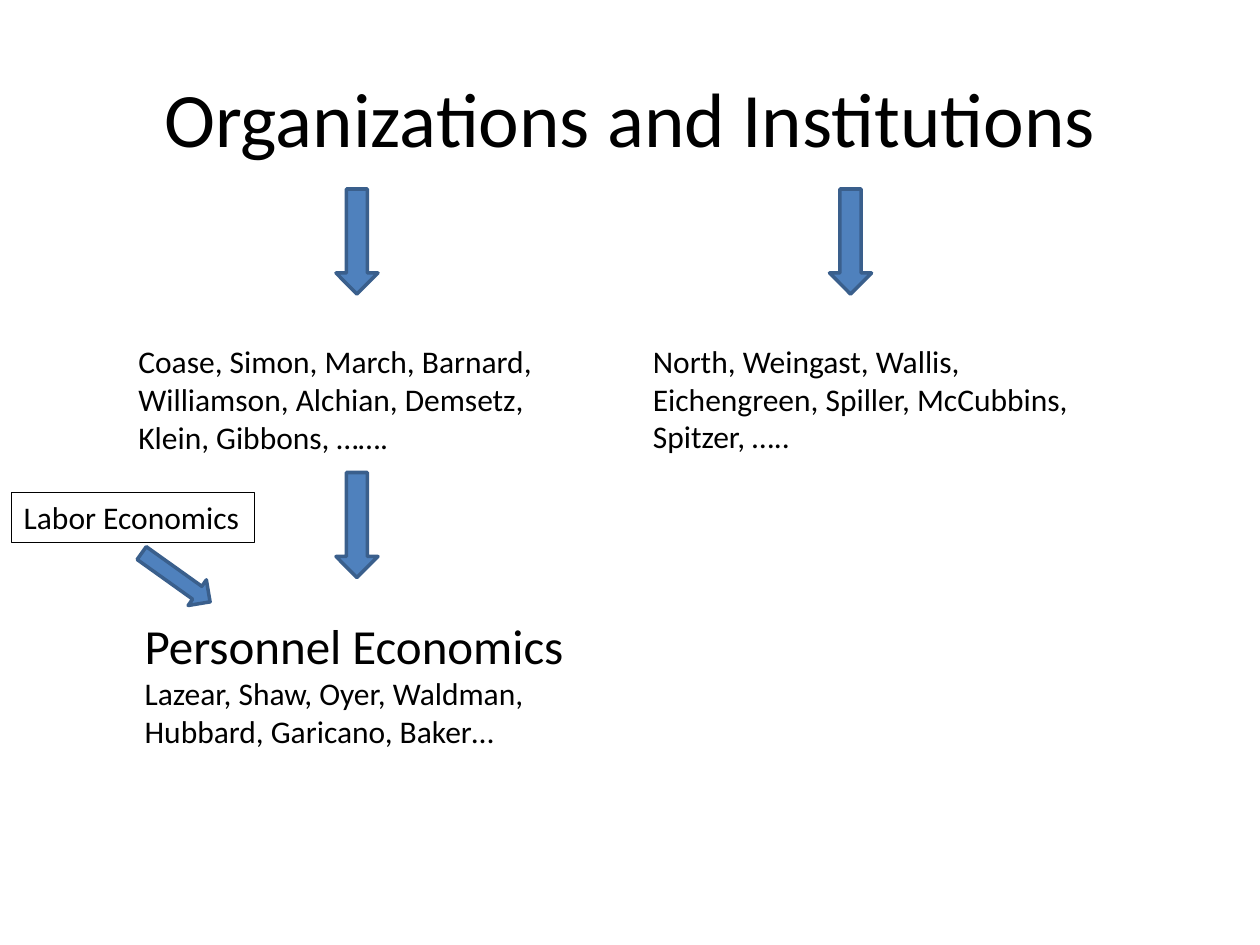
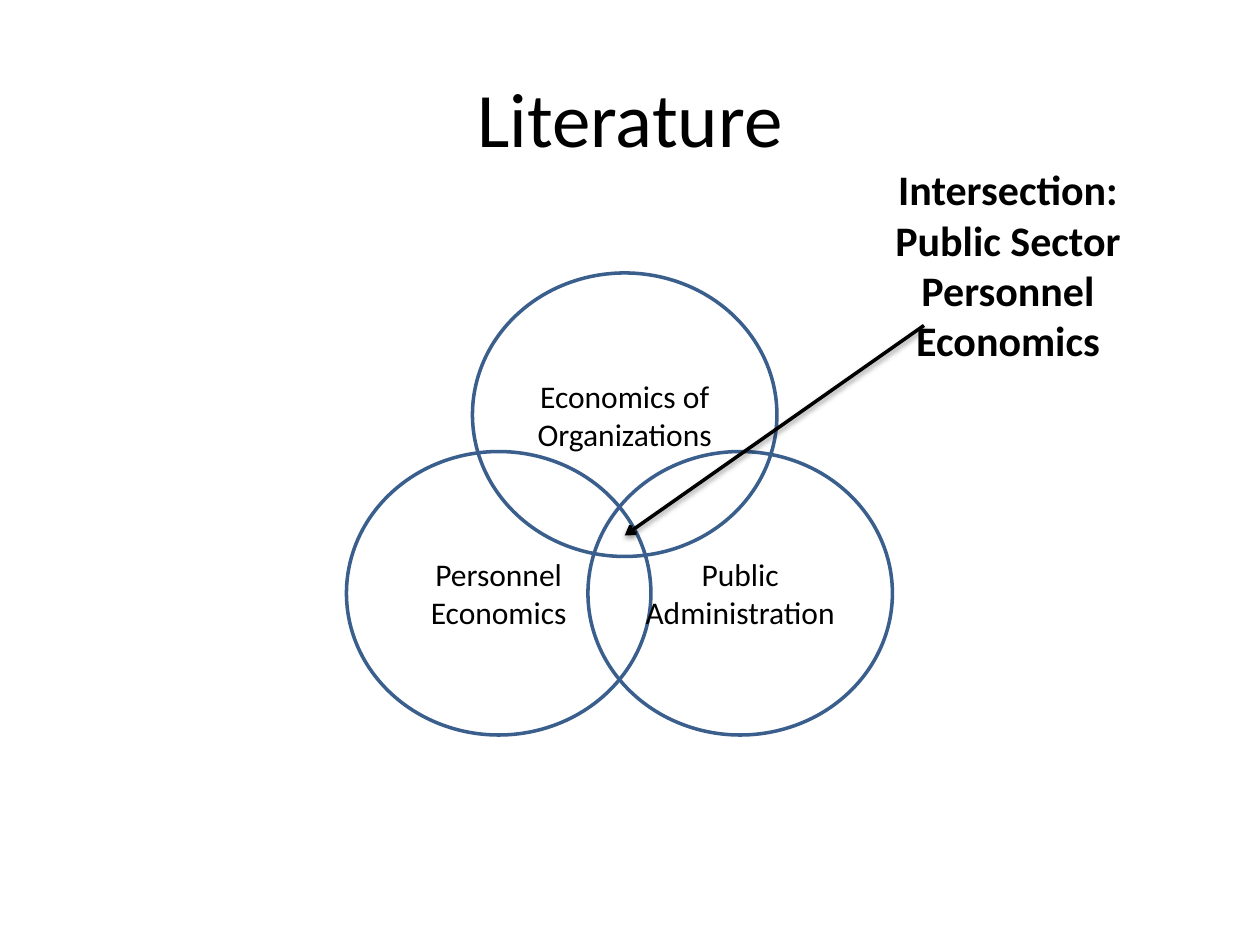
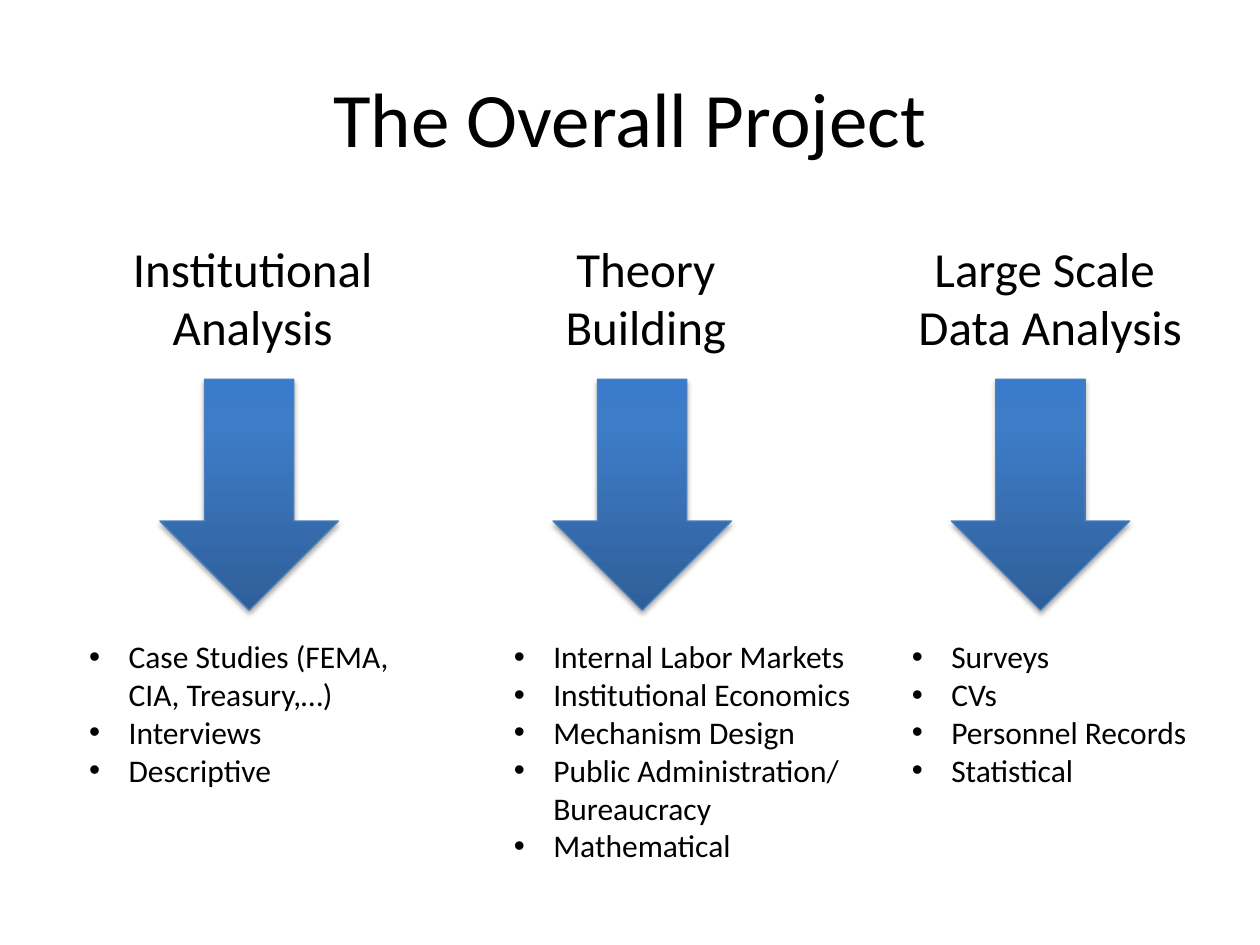
import pptx
import pptx.util
import pptx.dml.color
import pptx.enum.shapes
import pptx.enum.text
import pptx.oxml.ns
import lxml.etree

Pt = pptx.util.Pt
qn = pptx.oxml.ns.qn
Shape = pptx.enum.shapes.MSO_SHAPE
Anchor = pptx.enum.text.MSO_ANCHOR
Align = pptx.enum.text.PP_ALIGN
Auto = pptx.enum.text.MSO_AUTO_SIZE

# Shared look
FONT = "Calibri"
BLACK = "000000"
BLUE = "4F81BD"
EDGE = "3A5F8C"
RIM = "4B7EBC"
SHADE = [(0, "2F5F99"), (80, "3D7CC7"), (100, "3A7CCB")]
TITLE, HEAD, LEAD, BODY = 44, 28, 24, 18
INDENT = 22.5


def color(code):
    return pptx.dml.color.RGBColor.from_string(code)


def node(parent, tag, **attrs):
    item = lxml.etree.SubElement(parent, qn(tag))
    for key, value in attrs.items():
        item.set(key, str(value))
    return item


def stroke(line, code, width):
    line.color.rgb = color(code)
    line.width = Pt(width)


# Text
def write(frame, lines, size, align=Align.LEFT, bold=False, bullet=False):
    """Fill a frame; a line is a string or a (string, size) pair."""
    for i, line in enumerate(lines):
        words, points = line if isinstance(line, tuple) else (line, size)
        para = frame.paragraphs[0] if i == 0 else frame.add_paragraph()
        para.alignment = align
        if bullet:
            props = para._p.get_or_add_pPr()
            props.set("marL", str(Pt(INDENT)))
            props.set("indent", str(-Pt(INDENT)))
            node(props, "a:buFont", typeface="Arial")
            node(props, "a:buChar", char="•")
        run = para.add_run()
        run.text = words
        run.font.name = FONT
        run.font.size = Pt(points)
        run.font.bold = bold
        run.font.color.rgb = color(BLACK)


def label(slide, box, lines, size=BODY, wrap=True, **style):
    item = slide.shapes.add_textbox(*map(Pt, box))
    frame = item.text_frame
    frame.word_wrap = wrap
    frame.auto_size = Auto.SHAPE_TO_FIT_TEXT
    write(frame, lines, size, **style)
    return item


def page(deck, title):
    slide = deck.slides.add_slide(deck.slide_layouts[6])
    item = slide.shapes.add_textbox(Pt(36), Pt(21.6), Pt(648), Pt(90))
    frame = item.text_frame
    frame.word_wrap = True
    frame.vertical_anchor = Anchor.MIDDLE
    write(frame, [title], TITLE, Align.CENTER)
    return slide


# Shapes
def figure(slide, kind, box, edge=EDGE, width=2):
    item = slide.shapes.add_shape(kind, *map(Pt, box))
    item.shadow.inherit = False
    stroke(item.line, edge, width)
    return item


def arrow(slide, box, turn=0):
    item = figure(slide, Shape.DOWN_ARROW, box)
    item.fill.solid()
    item.fill.fore_color.rgb = color(BLUE)
    item.rotation = turn


def shadow(effects, dist, alpha):
    drop = node(effects, "a:outerShdw", blurRad=Pt(3.1), dist=Pt(dist),
                dir=5400000, rotWithShape=0)
    tint = node(drop, "a:srgbClr", val=BLACK)
    node(tint, "a:alpha", val=alpha * 1000)


def block(slide, box):
    """Large arrow, shaded from light at the top to dark at the tip."""
    item = figure(slide, Shape.DOWN_ARROW, box, RIM, 0.75)
    item.fill.gradient()
    item.fill.gradient_angle = 90
    props = item._element.spPr
    stops = props.find(qn("a:gradFill")).find(qn("a:gsLst"))
    for old in list(stops):
        stops.remove(old)
    for place, code in SHADE:
        node(node(stops, "a:gs", pos=place * 1000), "a:srgbClr", val=code)
    shadow(props.find(qn("a:effectLst")), 1.8, 35)


def circle(slide, left, top, words):
    item = figure(slide, Shape.OVAL, (left, top, 174, 162))
    item.fill.background()
    frame = item.text_frame
    frame.word_wrap = True
    frame.vertical_anchor = Anchor.MIDDLE
    write(frame, [words], BODY, Align.CENTER)


def pointer(slide, start, end):
    item = slide.shapes.add_connector(
        pptx.enum.shapes.MSO_CONNECTOR.STRAIGHT, *map(Pt, start + end))
    stroke(item.line, BLACK, 2)
    props = item._element.spPr
    node(props.find(qn("a:ln")), "a:tailEnd", type="arrow")
    shadow(node(props, "a:effectLst"), 1.6, 38)


# Slides
def fields(deck):
    slide = page(deck, "Organizations and Institutions")
    label(slide, (72, 192, 288, 72.7),
          ["Coase, Simon, March, Barnard, Williamson, Alchian, Demsetz,",
           "Klein, Gibbons, ……."])
    label(slide, (366, 191.8, 288, 72.7),
          ["North, Weingast, Wallis, Eichengreen, Spiller, McCubbins, "
           "Spitzer, ….."])
    for left, top in [(192, 108), (474, 108), (192, 270)]:
        arrow(slide, (left, top, 24, 60))
    label(slide, (75.6, 348, 266.4, 85),
          [("Personnel Economics", HEAD),
           "Lazear, Shaw, Oyer, Waldman, Hubbard, Garicano, Baker…"])
    arrow(slide, (91.5, 306, 18, 48), 305.5)
    labor = label(slide, (6.5, 281, 139, 29), ["Labor Economics"], wrap=False)
    stroke(labor.line, BLACK, 0.25)


def overlap(deck):
    slide = page(deck, "Literature")
    circle(slide, 270, 156, "Economics of Organizations")
    circle(slide, 198, 258, "Personnel Economics")
    circle(slide, 336, 258, "Public Administration")
    pointer(slide, (528, 186), (357, 306))
    label(slide, (492, 90, 168, 124),
          ["Intersection:", "Public Sector Personnel Economics"], LEAD,
          align=Align.CENTER, bold=True)


def project(deck):
    slide = page(deck, "The Overall Project")
    # Arrow left; heading left, width, lines; list left, width, lines
    parts = [
        (91.4, (67.7, 153.4, ["Institutional", "Analysis"]),
         (43.9, 192, ["Case Studies (FEMA, CIA, Treasury,…)", "Interviews",
                      "Descriptive"])),
        (316, (315.4, 107.3, ["Theory", "Building"]),
         (286.6, 210, ["Internal Labor Markets", "Institutional Economics",
                       "Mechanism Design",
                       "Public Administration/ Bureaucracy",
                       "Mathematical"])),
        (543.6, (509.8, 174.2, ["Large Scale", " Data Analysis"]),
         (514, 204, ["Surveys", "CVs", "Personnel Records", "Statistical"])),
    ]
    for left, (head, span, names), (edge, width, items) in parts:
        block(slide, (left, 216.7, 102, 132))
        label(slide, (head, 132.5, span, 75), names, HEAD, wrap=False,
              align=Align.CENTER)
        rows = max(len(items), 4)
        label(slide, (edge, 360.7, width, 7.2 + 21.8 * rows), items,
              bullet=True)


def main():
    deck = pptx.Presentation()
    deck.slide_width, deck.slide_height = Pt(720), Pt(540)
    fields(deck)
    overlap(deck)
    project(deck)
    deck.save("out.pptx")


if __name__ == "__main__":
    main()
